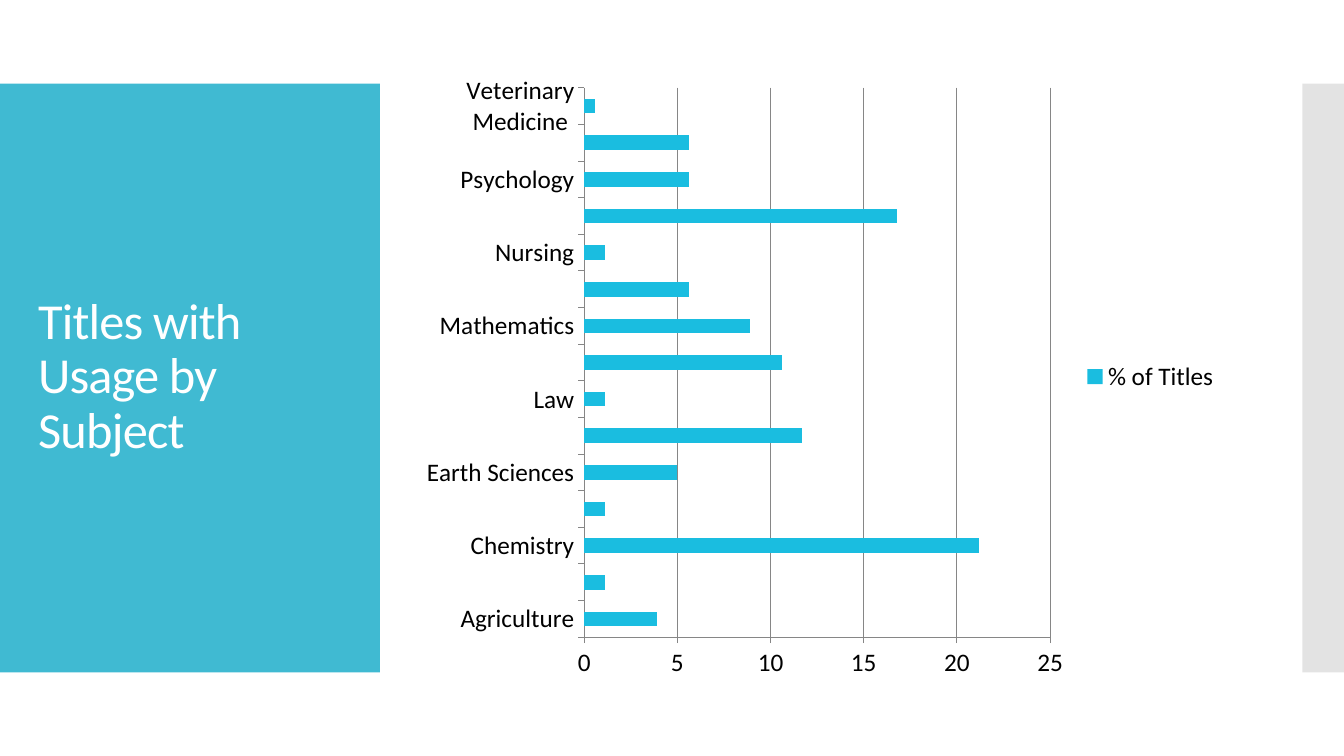
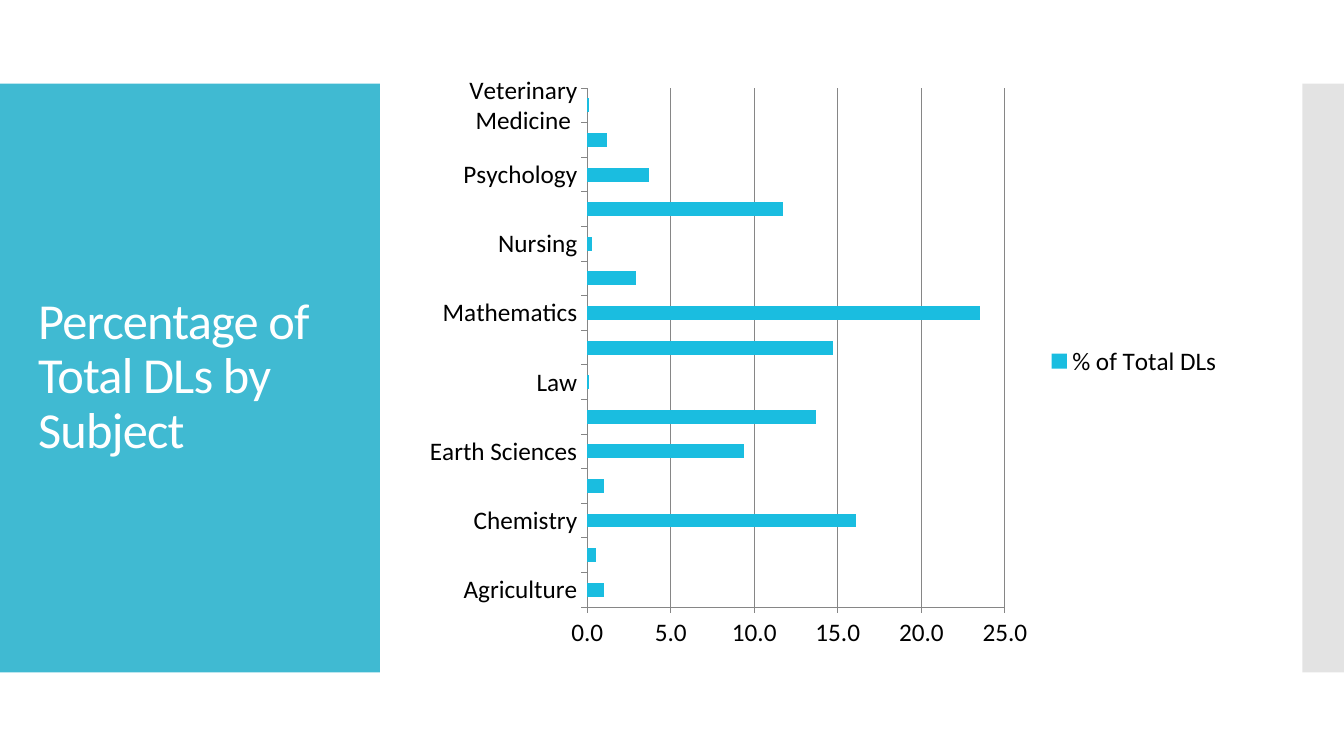
"""Two slides with bar charts of usage by subject, on one shared layout."""
from typing import NamedTuple

from lxml.etree import SubElement
from pptx import Presentation
from pptx.chart.data import CategoryChartData
from pptx.dml.color import RGBColor
from pptx.enum.chart import XL_CHART_TYPE, XL_LEGEND_POSITION, XL_TICK_MARK
from pptx.enum.shapes import MSO_SHAPE
from pptx.enum.text import MSO_ANCHOR, MSO_AUTO_SIZE, PP_ALIGN
from pptx.oxml.ns import qn
from pptx.util import Pt

FONT = "Calibri"
TEAL = RGBColor(0x40, 0xBA, 0xD2)
BAR_BLUE = RGBColor(0x1A, 0xBD, 0xE0)
SILVER = RGBColor(0xC8, 0xC8, 0xC8)
AXIS_GRAY = RGBColor(0x86, 0x86, 0x86)
BLACK = RGBColor(0x00, 0x00, 0x00)
WHITE = RGBColor(0xFF, 0xFF, 0xFF)

PAGE_WIDTH, PAGE_HEIGHT = Pt(960), Pt(540)
BAND_TOP = Pt(59.8)
BAND_HEIGHT = PAGE_HEIGHT - 2 * BAND_TOP
TITLE_BAND_WIDTH, EDGE_BAND_WIDTH = Pt(271.4), Pt(29.8)
CHART_TOP, CHART_WIDTH = Pt(45), Pt(576)
LINE_WIDTH = Pt(0.7)

SUBJECTS = [
    "Agriculture", "Business", "Chemistry", "Computer Science", "Earth Sciences",
    "Humanities", "Law", "Life Sciences", "Mathematics", "Medicine", "Nursing",
    "Physical Sciences", "Psychology", "Social Sciences", "Veterinary Medicine",
]


class SubjectChart(NamedTuple):
    """Hold what differs from one chart page to the next."""
    title: str
    series_name: str
    shares: list
    kind: XL_CHART_TYPE
    overlap: int
    number_format: str
    left: Pt
    height: Pt


SUBJECT_CHARTS = [
    SubjectChart(
        title="Titles with Usage by Subject",
        series_name="% of Titles",
        shares=[3.9, 1.1, 21.2, 1.1, 5, 11.7, 1.1, 10.6, 8.9, 5.6, 1.1, 16.8, 5.6, 5.6, 0.6],
        kind=XL_CHART_TYPE.BAR_STACKED, overlap=100, number_format="General",
        left=Pt(302.5), height=Pt(448),
    ),
    SubjectChart(
        title="Percentage of Total DLs by Subject",
        series_name="% of Total DLs",
        shares=[1, 0.5, 16.1, 1, 9.4, 13.7, 0.1, 14.7, 23.5, 2.9, 0.3, 11.7, 3.7, 1.2, 0.1],
        kind=XL_CHART_TYPE.BAR_CLUSTERED, overlap=0, number_format="0.0",
        left=Pt(304.7), height=Pt(426),
    ),
]


def add_band(page, left, width, color, opacity=100):
    """Draw a band and move it to the back of the layout that all pages share."""
    band = page.shapes.add_shape(MSO_SHAPE.RECTANGLE, left, BAND_TOP, width, BAND_HEIGHT)
    band.shadow.inherit = False
    band.fill.solid()
    band.fill.fore_color.rgb = color
    band.line.fill.background()
    if opacity < 100:
        fill_color = next(band.element.iter(qn("a:srgbClr")))
        SubElement(fill_color, qn("a:alpha")).set("val", str(opacity * 1000))
    page.slide_layout.shapes.element.insert(2, band.element)


def add_layout_bands(page):
    """Add the title band on the left and the pale band at the right edge."""
    add_band(page, 0, TITLE_BAND_WIDTH, TEAL)
    add_band(page, PAGE_WIDTH - EDGE_BAND_WIDTH, EDGE_BAND_WIDTH, SILVER, opacity=50)


def place_title(layout):
    """Set the title area that all pages inherit."""
    title = layout.placeholders[0]
    title.left, title.top, title.width, title.height = Pt(20), Pt(88.5), Pt(232), Pt(362)


def set_title(page, text):
    """Fill and format the title placeholder."""
    title = page.shapes.title
    frame = title.text_frame
    frame.text = text
    frame.word_wrap = True
    frame.auto_size = MSO_AUTO_SIZE.NONE
    frame.vertical_anchor = MSO_ANCHOR.MIDDLE
    para = frame.paragraphs[0]
    para.alignment = PP_ALIGN.LEFT
    para.line_spacing = 0.9
    font = para.runs[0].font
    font.name = FONT
    font.size = Pt(36)
    font.color.rgb = WHITE
    for span_properties in title.element.iter(qn("a:rPr")):
        span_properties.set("spc", "-60")


def style_line(line):
    """Make a chart line thin and gray."""
    line.color.rgb = AXIS_GRAY
    line.width = LINE_WIDTH


def style_axes(chart, number_format):
    """Format both axes, the gridlines and the value labels."""
    for axis in (chart.category_axis, chart.value_axis):
        axis.major_tick_mark = XL_TICK_MARK.OUTSIDE
        axis.minor_tick_mark = XL_TICK_MARK.NONE
        style_line(axis.format.line)
    chart.value_axis.has_major_gridlines = True
    style_line(chart.value_axis.major_gridlines.format.line)
    labels = chart.value_axis.tick_labels
    labels.number_format = number_format
    labels.number_format_is_linked = False


def style_bars(plot, overlap):
    """Set the bar spacing and colour."""
    plot.gap_width = 150
    plot.overlap = overlap
    plot.vary_by_categories = False
    fill = plot.series[0].format.fill
    fill.solid()
    fill.fore_color.rgb = BAR_BLUE


def add_bar_chart(page, subject_chart):
    """Add a one-series bar chart by subject with a legend on the right."""
    data = CategoryChartData()
    data.categories = SUBJECTS
    data.add_series(subject_chart.series_name, subject_chart.shares)
    chart = page.shapes.add_chart(
        subject_chart.kind, subject_chart.left, CHART_TOP,
        CHART_WIDTH, subject_chart.height, data,
    ).chart
    chart.has_title = False
    chart.font.name = FONT
    chart.font.size = Pt(18)
    chart.font.color.rgb = BLACK
    chart.has_legend = True
    chart.legend.position = XL_LEGEND_POSITION.RIGHT
    chart.legend.include_in_layout = False
    style_bars(chart.plots[0], subject_chart.overlap)
    style_axes(chart, subject_chart.number_format)


def main():
    """Build and save the deck."""
    deck = Presentation()
    deck.slide_width, deck.slide_height = PAGE_WIDTH, PAGE_HEIGHT
    layout = deck.slide_layouts.get_by_name("Title Only")
    place_title(layout)
    for subject_chart in SUBJECT_CHARTS:
        page = deck.slides.add_slide(layout)
        set_title(page, subject_chart.title)
        add_bar_chart(page, subject_chart)
    add_layout_bands(deck.slides[0])
    deck.save("out.pptx")


if __name__ == "__main__":
    main()
